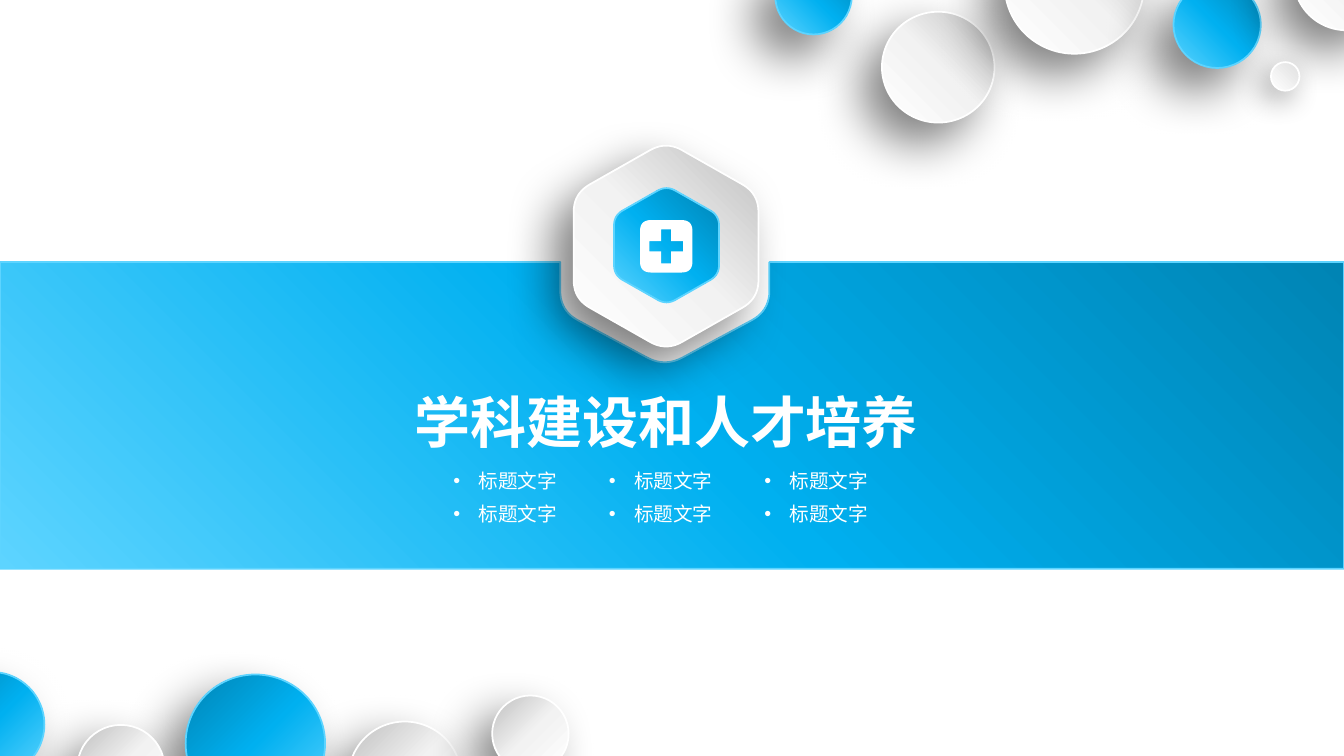
from itertools import product

from lxml import etree
from pptx import Presentation
from pptx.dml.color import RGBColor
from pptx.enum.shapes import MSO_SHAPE
from pptx.enum.text import MSO_AUTO_SIZE, PP_ALIGN
from pptx.oxml.ns import qn
from pptx.util import Inches, Pt

OVAL = MSO_SHAPE.OVAL
GROW = MSO_AUTO_SIZE.SHAPE_TO_FIT_TEXT
CENTER, LEFT = PP_ALIGN.CENTER, PP_ALIGN.LEFT

WIDE, HIGH = Inches(13.33), Inches(7.5)
COLS, ROWS = 160, 90
HEX = {
    "white": "FFFFFF", "pale": "F2F2F2", "gray": "BFBFBF", "mist": "E0E0E0",
    "sky": "5DD4FF", "blue": "00B0F0", "deep": "0084B4", "black": "000000",
}
LOOKS = {
    "blue": {"stops": ("sky", "blue", "deep"), "angle": 45, "edge": "sky", "shade": (50, 35, 22)},
    "gray": {"stops": ("white", "pale", "gray"), "angle": 45, "edge": "white", "shade": (50, 35, 20)},
    "dot": {"stops": ("mist", "white"), "angle": 225, "edge": "white", "shade": (40, 22, 8)},
}
TOP = [
    (13, 1.4, 13.4, 13.2, "gray"), (0.3, -5, 9.1, 9.1, "blue"),
    (27.6, -10, 16.6, 16.4, "gray"), (47.7, -2.2, 10.4, 10.3, "blue"),
    (62, -8.9, 12.6, 12.5, "gray"), (59.3, 7.4, 3.4, 3.4, "dot"),
]
BASE = [
    (41.5, 5.9, 13.4, 13.2, "gray"), (58.6, 2.8, 9.1, 9.1, "gray"),
    (22.1, 0.3, 16.6, 16.4, "blue"), (9.2, 6.3, 10.4, 10.3, "gray"),
    (-7.3, 0, 12.6, 12.5, "blue"),
]


def grid(x, y):
    """Turn columns and rows into slide lengths."""
    return round(x * WIDE / COLS), round(y * HIGH / ROWS)


def tint(name):
    """Give a named colour."""
    return RGBColor.from_string(HEX[name])


def paint(shape, look, shade=True):
    """Set the gradient, edge and shadow of a shape."""
    kind = LOOKS[look]
    shape.fill.gradient()
    shape.fill.gradient_angle = kind["angle"]
    stops = next(shape.element.iter(qn("a:gsLst")))
    for stop in list(stops):
        stops.remove(stop)
    last = len(kind["stops"]) - 1
    for i, name in enumerate(kind["stops"]):
        stop = etree.SubElement(stops, qn("a:gs"), pos=str(i * 100000 // last))
        etree.SubElement(stop, qn("a:srgbClr"), val=HEX[name])
    shape.line.color.rgb = tint(kind["edge"])
    shape.line.width = Pt(1.25)
    shape.shadow.inherit = False
    if shade:
        alpha, blur, dist = kind["shade"]
        glow = etree.SubElement(
            next(shape.element.iter(qn("a:effectLst"))), qn("a:outerShdw"),
            blurRad=str(Pt(blur)), dist=str(Pt(dist)), dir=str(135 * 60000),
            algn="tr", rotWithShape="0")
        color = etree.SubElement(glow, qn("a:srgbClr"), val=HEX["black"])
        etree.SubElement(color, qn("a:alpha"), val=str(alpha * 1000))


def bend(before, point, after, cut, steps=10):
    """Round one corner with a quadratic curve."""
    ends = []
    for x, y in (before, after):
        dx, dy = x - point[0], y - point[1]
        share = cut / (dx * dx + dy * dy) ** 0.5
        ends.append((point[0] + dx * share, point[1] + dy * share))
    for i in range(steps + 1):
        t = i / steps
        yield tuple((1 - t) ** 2 * a + 2 * t * (1 - t) * b + t * t * c
                    for a, b, c in zip(ends[0], point, ends[1]))


def smooth(points, cut):
    """Round every corner of a closed outline."""
    count = len(points)
    return [p for i in range(count)
            for p in bend(points[i - 1], points[i], points[(i + 1) % count], cut)]


def draw(slide, *loops):
    """Draw closed loops as one freeform."""
    first, *rest = [[grid(*p) for p in loop] for loop in loops]
    pen = slide.shapes.build_freeform(*first[0])
    pen.add_line_segments(first[1:], close=True)
    for loop in rest:
        pen.move_to(*loop[0])
        pen.add_line_segments(loop[1:], close=True)
    return pen.convert_to_shape()


def hexa(x, y, w, h):
    """Give the corners of a hexagon with its point up."""
    return [(x + w / 2, y), (x + w, y + h / 4), (x + w, y + h * 3 / 4),
            (x + w / 2, y + h), (x, y + h * 3 / 4), (x, y + h / 4)]


def band(slide, x, y, w, h):
    """Draw the blue band with its rounded notch."""
    left, mid, right = x + 66.7, x + 79.15, x + 91.6
    notch = [(left, y), (left, y + 5.8), (mid, y + 12.5), (right, y + 5.8), (right, y)]
    curves = [p for i in (1, 2, 3) for p in bend(*notch[i - 1:i + 2], 2.4)]
    edge = [(x, y), notch[0], *curves, notch[-1], (x + w, y), (x + w, y + h), (x, y + h)]
    paint(draw(slide, edge), "blue", False)


def badge(slide, x, y, w, h):
    """Draw the two hexagons and the cross icon."""
    paint(draw(slide, smooth(hexa(x, y, w, h), 2.2)), "gray")
    core = hexa(x + 4.8, y + 5.3, 12.5, 14.2)
    paint(draw(slide, smooth(core, 1.2)), "blue", False)
    icon(slide, x + 7.9, y + 9.4, 6.24)


def icon(slide, x, y, size):
    """Draw a white tile with a cross cut out."""
    tile = [(x, y), (x + size, y), (x + size, y + size), (x, y + size)]
    a, b, c, d = 1.1, size / 2 - 0.6, size / 2 + 0.6, size - 1.1
    cross = [(b, a), (c, a), (c, b), (d, b), (d, c), (c, c),
             (c, d), (b, d), (b, c), (a, c), (a, b), (b, b)]
    shape = draw(slide, smooth(tile, 1.3), [(x + p, y + q) for p, q in cross])
    shape.fill.solid()
    shape.fill.fore_color.rgb = tint("white")
    shape.line.fill.background()
    shape.shadow.inherit = False


def balls(slide, x, y, items, flip=False):
    """Scatter shaded circles from a corner."""
    for dx, dy, w, h, look in items:
        ball = slide.shapes.add_shape(OVAL, *grid(x + dx, y + dy), *grid(w, h))
        paint(ball, look)
        if flip:
            ball.element.spPr.xfrm.set("flipH", "1")


def words(slide, box, text, size, bold=False, align=LEFT, pad=0.1, dot=False):
    """Place one line of white text."""
    x, y, w, h = box
    frame = slide.shapes.add_textbox(*grid(x, y), *grid(w, h)).text_frame
    form = {"word_wrap": True, "auto_size": GROW,
            "margin_left": Inches(pad), "margin_right": Inches(pad)}
    for key, value in form.items():
        setattr(frame, key, value)
    para = frame.paragraphs[0]
    para.alignment = align
    if dot:
        props = para._p.get_or_add_pPr()
        props.set("marL", str(Inches(0.25)))
        props.set("indent", str(Inches(-0.25)))
        etree.SubElement(props, qn("a:buFont"), typeface="Arial")
        etree.SubElement(props, qn("a:buChar"), char="•")
    run = para.add_run()
    run.text = text
    for key, value in {"name": "Arial", "size": Pt(size), "bold": bold}.items():
        setattr(run.font, key, value)
    run.font.color.rgb = tint("white")


def topics(slide, x, y):
    """Lay out the bullets in two rows of three."""
    for row, col in product(range(2), range(3)):
        words(slide, (x + col * 18.5, y + row * 4, 23, 4.1), "标题文字", 14, dot=True)


def main():
    """Build and save the section slide."""
    deck = Presentation()
    deck.slide_width, deck.slide_height = WIDE, HIGH
    slide = deck.slides.add_slide(deck.slide_layouts[6])
    band(slide, 0, 31.2, COLS, 36.5)
    badge(slide, 68.3, 16.8, 22, 25)
    words(slide, (36.6, 45.6, 85.4, 9.2), "学科建设和人才培养", 40, True, CENTER, 0)
    topics(slide, 52.8, 55.2)
    balls(slide, 92, 0, TOP)
    balls(slide, 0, 80, BASE, True)
    deck.save("out.pptx")


if __name__ == "__main__":
    main()
